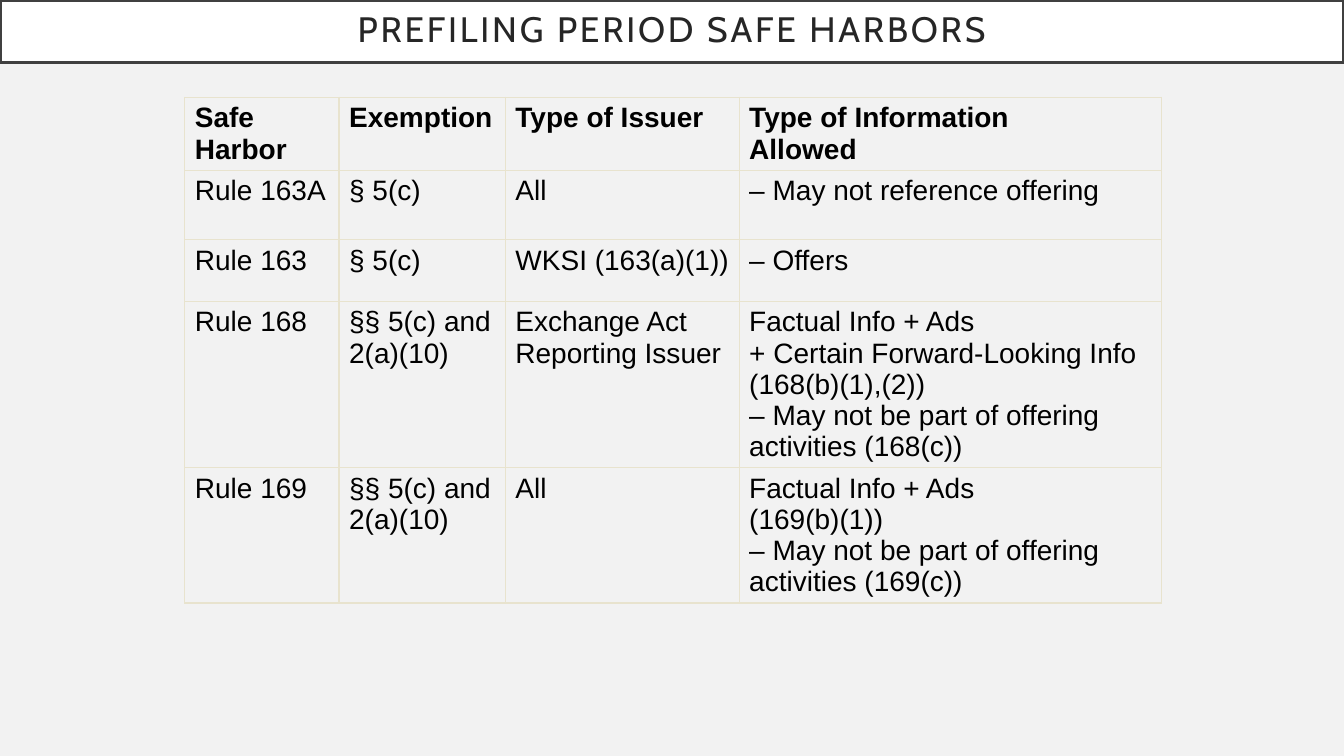
from dataclasses import dataclass

from lxml.etree import SubElement
from pptx import Presentation
from pptx.dml.color import RGBColor
from pptx.enum.text import MSO_ANCHOR as Anchor, MSO_AUTO_SIZE as AutoSize, PP_ALIGN as Align
from pptx.oxml.ns import qn
from pptx.util import Inches, Pt

WHITE = RGBColor(0xFF, 0xFF, 0xFF)
BLACK = RGBColor(0x00, 0x00, 0x00)
PAPER = RGBColor(0xF2, 0xF2, 0xF2)
FRAME = RGBColor(0x40, 0x40, 0x40)
TITLE_INK = RGBColor(0x26, 0x26, 0x26)
RULE_LINE = RGBColor(0xE8, 0xE3, 0xCE)

GRID_COLUMNS, GRID_ROWS = 160, 90
TITLE_ROWS = 7.44
TABLE_LEFT, TABLE_TOP = 22, 11.6
COLUMN_SPANS = (18.36, 19.8, 27.84, 50.28)


@dataclass(frozen=True)
class TableRow:
    span: float
    texts: tuple[str, ...]
    bold: bool = False


TABLE_ROWS = (
    TableRow(8.7, ("Safe Harbor", "Exemption", "Type of Issuer",
                   "Type of Information\nAllowed"), bold=True),
    TableRow(8.25, ("Rule 163A", "§ 5(c)", "All", "– May not reference offering")),
    TableRow(7.35, ("Rule 163", "§ 5(c)", "WKSI (163(a)(1))", "– Offers")),
    TableRow(19.75, ("Rule 168", "§§ 5(c) and 2(a)(10)", "Exchange Act\nReporting Issuer",
                     "Factual Info + Ads\n+ Certain Forward-Looking Info\n(168(b)(1),(2))\n"
                     "– May not be part of offering activities (168(c))")),
    TableRow(16.1, ("Rule 169", "§§ 5(c) and 2(a)(10)", "All",
                    "Factual Info + Ads\n(169(b)(1))\n"
                    "– May not be part of offering activities (169(c))")),
)


def grid(units: float) -> int:
    return round(Inches(units / 12))


def style_span(span, face: str, size: float, ink: RGBColor, bold: bool = False) -> None:
    span.font.name = face
    span.font.size = Pt(size)
    span.font.bold = bold
    span.font.color.rgb = ink


def draw_title(page, text: str) -> None:
    box = page.shapes.title
    box.left, box.top = 0, 0
    box.width, box.height = grid(GRID_COLUMNS), grid(TITLE_ROWS)
    box.fill.solid()
    box.fill.fore_color.rgb = WHITE
    box.line.color.rgb = FRAME
    box.line.width = Pt(2.5)
    frame = box.text_frame
    frame.text = text
    frame.word_wrap = True
    frame.auto_size = AutoSize.NONE
    frame.vertical_anchor = Anchor.MIDDLE
    frame.margin_left = frame.margin_right = Inches(0.2)
    frame.margin_top = frame.margin_bottom = Inches(0.2)
    para = frame.paragraphs[0]
    para.alignment = Align.CENTER
    para.line_spacing = 0.9
    span = para.runs[0]
    style_span(span, "Cabin", 25.2, TITLE_INK)
    span._r.get_or_add_rPr().set("spc", "200")


def draw_borders(cell) -> None:
    properties = cell._tc.get_or_add_tcPr()
    for side in ("lnL", "lnR", "lnT", "lnB"):
        border = SubElement(properties, qn(f"a:{side}"), w=str(Pt(1)))
        fill = SubElement(border, qn("a:solidFill"))
        SubElement(fill, qn("a:srgbClr"), val=str(RULE_LINE))


def draw_cell(cell, text: str, bold: bool) -> None:
    draw_borders(cell)
    cell.fill.background()
    cell.text_frame.text = text
    for para in cell.text_frame.paragraphs:
        for span in para.runs:
            style_span(span, "Arial", 20, BLACK, bold)


def draw_table(page, rows: tuple[TableRow, ...]) -> None:
    table = page.shapes.add_table(
        len(rows), len(COLUMN_SPANS), grid(TABLE_LEFT), grid(TABLE_TOP),
        grid(sum(COLUMN_SPANS)), grid(sum(row.span for row in rows)),
    ).table
    table.first_row = False
    table.horz_banding = False
    for column, span in zip(table.columns, COLUMN_SPANS):
        column.width = grid(span)
    for line, row in zip(table.rows, rows):
        line.height = grid(row.span)
        for cell, text in zip(line.cells, row.texts):
            draw_cell(cell, text, row.bold)


def main() -> None:
    deck = Presentation()
    deck.slide_width, deck.slide_height = grid(GRID_COLUMNS), grid(GRID_ROWS)
    page = deck.slides.add_slide(deck.slide_layouts[5])
    page.background.fill.solid()
    page.background.fill.fore_color.rgb = PAPER
    draw_title(page, "PREFILING PERIOD SAFE HARBORS")
    draw_table(page, TABLE_ROWS)
    deck.save("out.pptx")


if __name__ == "__main__":
    main()
